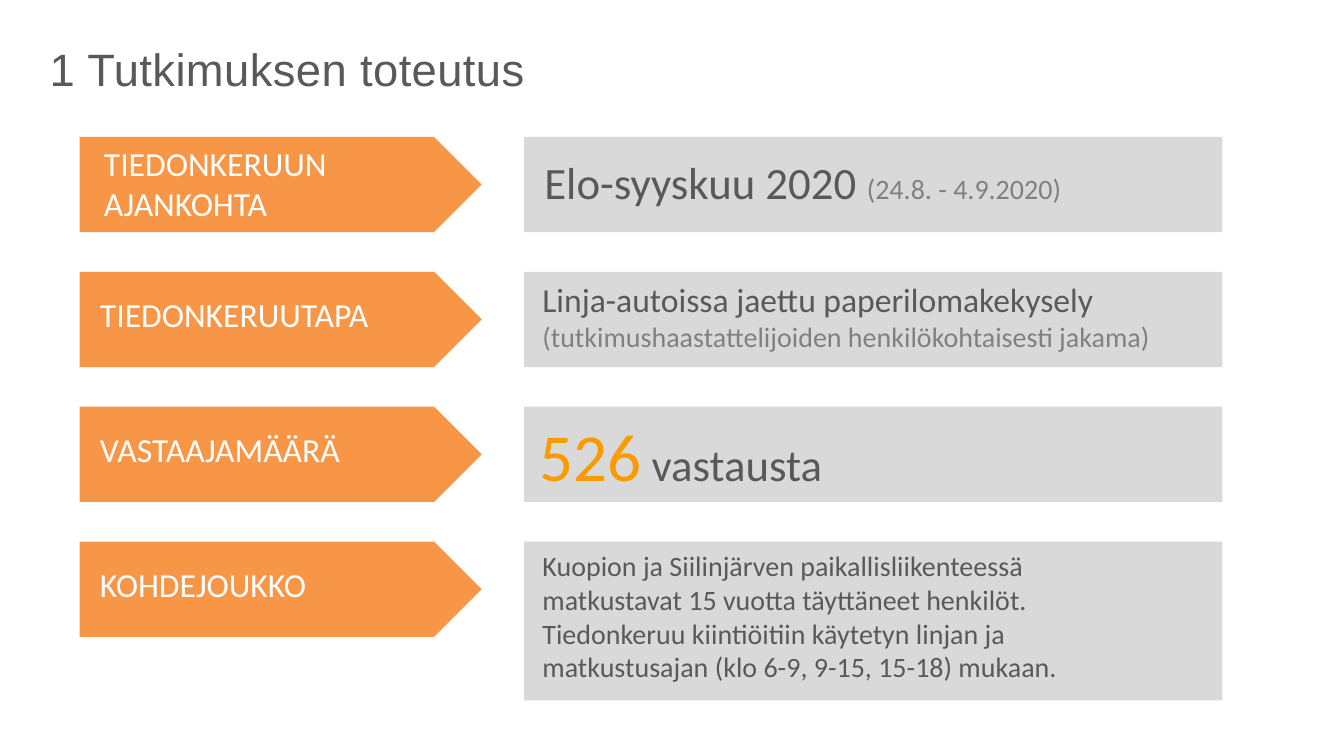
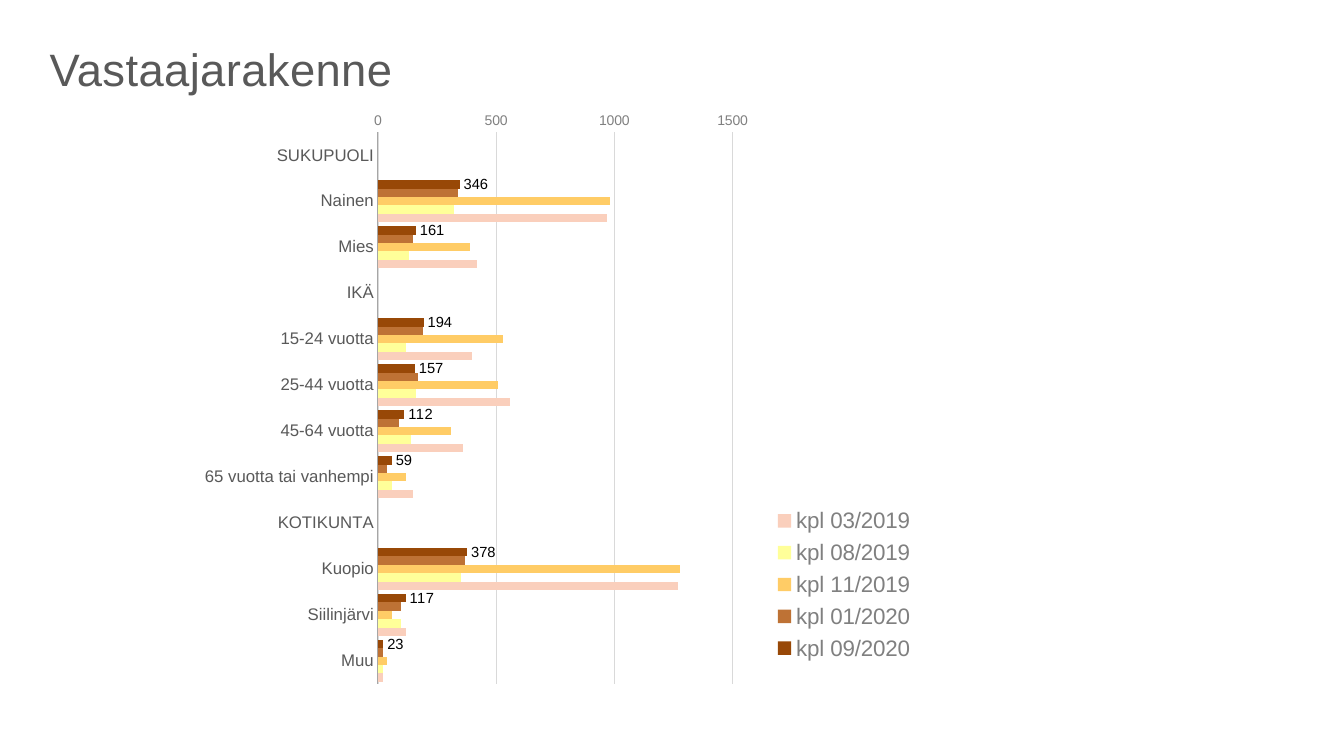
from lxml import etree
from pptx import Presentation
from pptx.chart.data import CategoryChartData
from pptx.dml.color import RGBColor
from pptx.enum.chart import (XL_AXIS_CROSSES, XL_CHART_TYPE, XL_LABEL_POSITION,
                             XL_LEGEND_POSITION, XL_TICK_MARK)
from pptx.enum.shapes import MSO_SHAPE
from pptx.enum.text import MSO_ANCHOR, PP_ALIGN
from pptx.oxml.ns import qn
from pptx.util import Cm, Pt

COLORS = {
    "text": "595959", "muted": "808080", "accent": "FF9900", "arrow": "F79646",
    "panel": "D9D9D9", "white": "FFFFFF", "black": "000000", "axis": "A6A6A6",
    "brown": "984807", "copper": "BE7235", "gold": "FFCC66",
    "yellow": "FFFF99", "peach": "FACFBC",
}
HEAD, BODY = "Arial", "Calibri"

# Row: label lines, label insets (left, bottom), panel paragraphs of
# (text, size, color) runs, panel insets (left, right, bottom), panel height
ROWS = [
    (["TIEDONKERUUN", "AJANKOHTA"], (0.61, 0.08),
     [[("Elo-syyskuu 2020 ", 32, "text"), ("(24.8. - 4.9.2020)", 20, "muted")]],
     (0.51, 0.2, 0.13), 2.4),
    (["TIEDONKERUUTAPA"], (0.51, 0.25),
     [[("Linja-autoissa jaettu paperilomakekysely", 24, "text")],
      [("(tutkimushaastattelijoiden henkilökohtaisesti jakama)", 20, "muted")]],
     (0.46, 0.2, 0.18), 2.4),
    (["VASTAAJAMÄÄRÄ"], (0.51, 0.25),
     [[("526", 48, "accent"), (" vastausta", 32, "text")]],
     (0.38, 0.2, 0), 2.4),
    (["KOHDEJOUKKO"], (0.51, 0.25),
     [[("Kuopion ja Siilinjärven paikallisliikenteessä matkustavat "
        "15 vuotta täyttäneet henkilöt.", 20, "text")],
      [("Tiedonkeruu kiintiöitiin käytetyn linjan ja matkustusajan "
        "(klo 6-9, 9-15, 15-18) mukaan.", 20, "text")]],
     (0.46, 2.08, 0.25), 4),
]

GROUPS = ["SUKUPUOLI", "Nainen", "Mies", "IKÄ", "15-24 vuotta", "25-44 vuotta",
          "45-64 vuotta", "65 vuotta tai vanhempi", "KOTIKUNTA", "Kuopio",
          "Siilinjärvi", "Muu"]
SERIES = [
    ("kpl 09/2020", "brown",
     [None, 346, 161, None, 194, 157, 112, 59, None, 378, 117, 23]),
    ("kpl 01/2020", "copper",
     [None, 340, 150, None, 190, 170, 90, 40, None, 370, 100, 20]),
    ("kpl 11/2019", "gold",
     [None, 980, 390, None, 530, 510, 310, 120, None, 1280, 60, 40]),
    ("kpl 08/2019", "yellow",
     [None, 320, 130, None, 120, 160, 140, 60, None, 350, 100, 20]),
    ("kpl 03/2019", "peach",
     [None, 970, 420, None, 400, 560, 360, 150, None, 1270, 120, 20]),
]


def rgb(name):
    return RGBColor.from_string(COLORS[name])


def style(font, size, color, face):
    font.size, font.name = Pt(size), face
    font.color.rgb = rgb(color)


def add_title(slide, text):
    box = slide.shapes.add_textbox(Cm(1), Cm(0.77), Cm(27.25), Cm(1.37))
    box.text_frame.word_wrap = True
    par = box.text_frame.paragraphs[0]
    par.line_spacing = 1.1
    run = par.add_run()
    run.text = text
    style(par.font, 32.4, "text", HEAD)
    run.font._element.set("spc", "30")


def add_block(slide, kind, box, fill, pars, insets):
    """Filled shape with left-aligned paragraphs; insets are left, right, bottom."""
    shape = slide.shapes.add_shape(kind, *(Cm(n) for n in box))
    shape.shadow.inherit = False
    shape.fill.solid()
    shape.fill.fore_color.rgb = rgb(fill)
    shape.line.fill.background()
    frame = shape.text_frame
    frame.word_wrap = True
    frame.vertical_anchor = MSO_ANCHOR.MIDDLE
    frame.margin_left, frame.margin_right, frame.margin_bottom = map(Cm, insets)
    frame.margin_top = 0
    for i, runs in enumerate(pars):
        par = frame.add_paragraph() if i else frame.paragraphs[0]
        par.alignment = PP_ALIGN.LEFT
        for text, size, color in runs:
            run = par.add_run()
            run.text = text
            style(run.font, size, color, BODY)


def add_row(slide, left, top, row):
    lines, (inset, lift), pars, insets, height = row
    label = [[(line, 24, "white")] for line in lines]
    add_block(slide, MSO_SHAPE.PENTAGON, (left, top, 10.13, 2.4), "arrow",
              label, (inset, 0, lift))
    add_block(slide, MSO_SHAPE.RECTANGLE, (left + 11.2, top, 17.6, height),
              "panel", pars, insets)


def set_layout(parent, index, x, y, w, h, inner=False):
    """Fix a chart part at fractions of the chart area."""
    for old in parent.findall(qn("c:layout")):
        parent.remove(old)
    layout = etree.Element(qn("c:layout"))
    manual = etree.SubElement(layout, qn("c:manualLayout"))
    items = [("layoutTarget", "inner")] if inner else []
    items += [("xMode", "edge"), ("yMode", "edge"),
              ("x", x), ("y", y), ("w", w), ("h", h)]
    for tag, val in items:
        etree.SubElement(manual, qn("c:" + tag)).set("val", str(val))
    parent.insert(index, layout)


def style_axes(chart):
    cat, val = chart.category_axis, chart.value_axis
    for axis, size, color in ((cat, 12, "text"), (val, 10, "muted")):
        axis.major_tick_mark = axis.minor_tick_mark = XL_TICK_MARK.NONE
        style(axis.tick_labels.font, size, color, HEAD)
    cat.reverse_order = True
    cat.crosses = XL_AXIS_CROSSES.MAXIMUM
    cat.format.line.color.rgb = rgb("axis")
    cat.format.line.width = Pt(0.75)
    val.minimum_scale, val.maximum_scale, val.major_unit = 0, 1500, 500
    val.format.line.fill.background()
    val.major_gridlines.format.line.color.rgb = rgb("panel")
    val.major_gridlines.format.line.width = Pt(0.25)


def add_bars(slide, left, top, width, height):
    data = CategoryChartData()
    data.categories = GROUPS
    for name, _, vals in SERIES:
        data.add_series(name, vals)
    chart = slide.shapes.add_chart(
        XL_CHART_TYPE.BAR_CLUSTERED, Cm(left), Cm(top), Cm(width), Cm(height),
        data).chart
    chart.has_title = False
    style(chart.font, 18, "black", HEAD)
    style_axes(chart)
    plot = chart.plots[0]
    plot.gap_width, plot.overlap, plot.vary_by_categories = 50, 0, False
    for series, (_, color, _) in zip(plot.series, SERIES):
        series.format.fill.solid()
        series.format.fill.fore_color.rgb = rgb(color)
    labels = plot.series[0].data_labels
    labels.show_value = True
    labels.position = XL_LABEL_POSITION.OUTSIDE_END
    style(labels.font, 10.5, "black", HEAD)
    chart.has_legend = True
    legend = chart.legend
    legend.position = XL_LEGEND_POSITION.RIGHT
    legend.include_in_layout = False
    style(legend.font, 16, "muted", HEAD)
    set_layout(legend._element, 1, 0.81, 0.63, 0.18, 0.27)
    area = chart._chartSpace.find(".//" + qn("c:plotArea"))
    set_layout(area, 0, 0.327, 0.033, 0.436, 0.893, inner=True)


def main():
    deck = Presentation()
    deck.slide_width, deck.slide_height = Cm(33.87), Cm(19.05)
    blank = deck.slide_layouts[6]

    facts = deck.slides.add_slide(blank)
    add_title(facts, "1 Tutkimuksen toteutus")
    for i, row in enumerate(ROWS):
        add_row(facts, 2.01, 3.45 + 3.4 * i, row)

    profile = deck.slides.add_slide(blank)
    add_title(profile, "Vastaajarakenne")
    add_bars(profile, 2.82, 2.82, 20.5, 15.57)

    deck.save("out.pptx")


if __name__ == "__main__":
    main()
